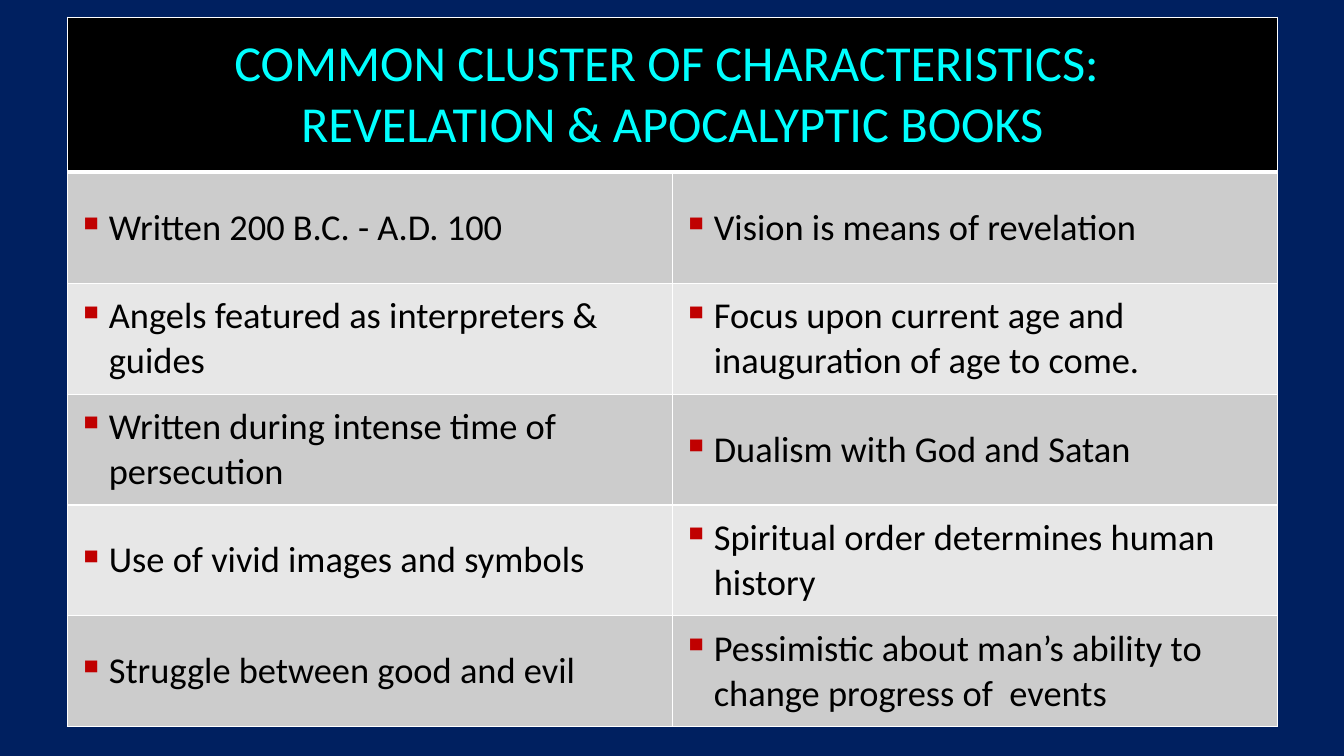
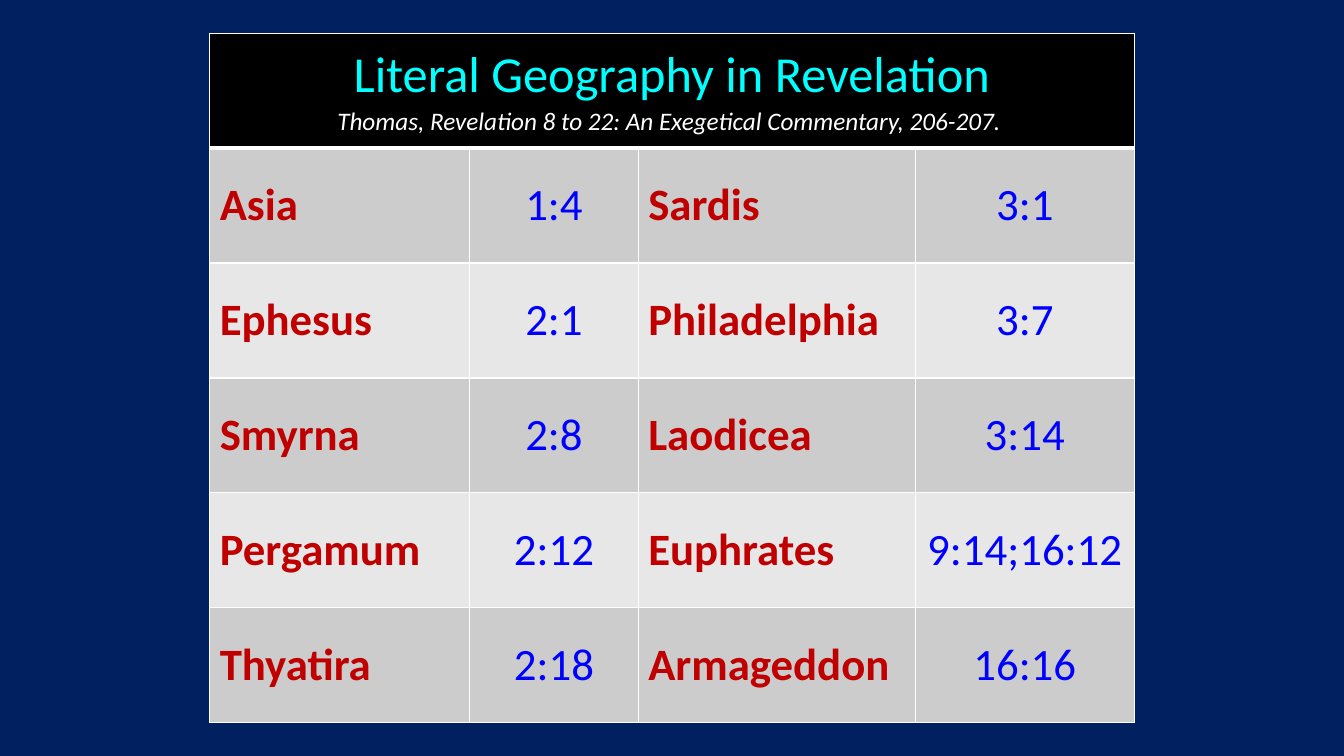
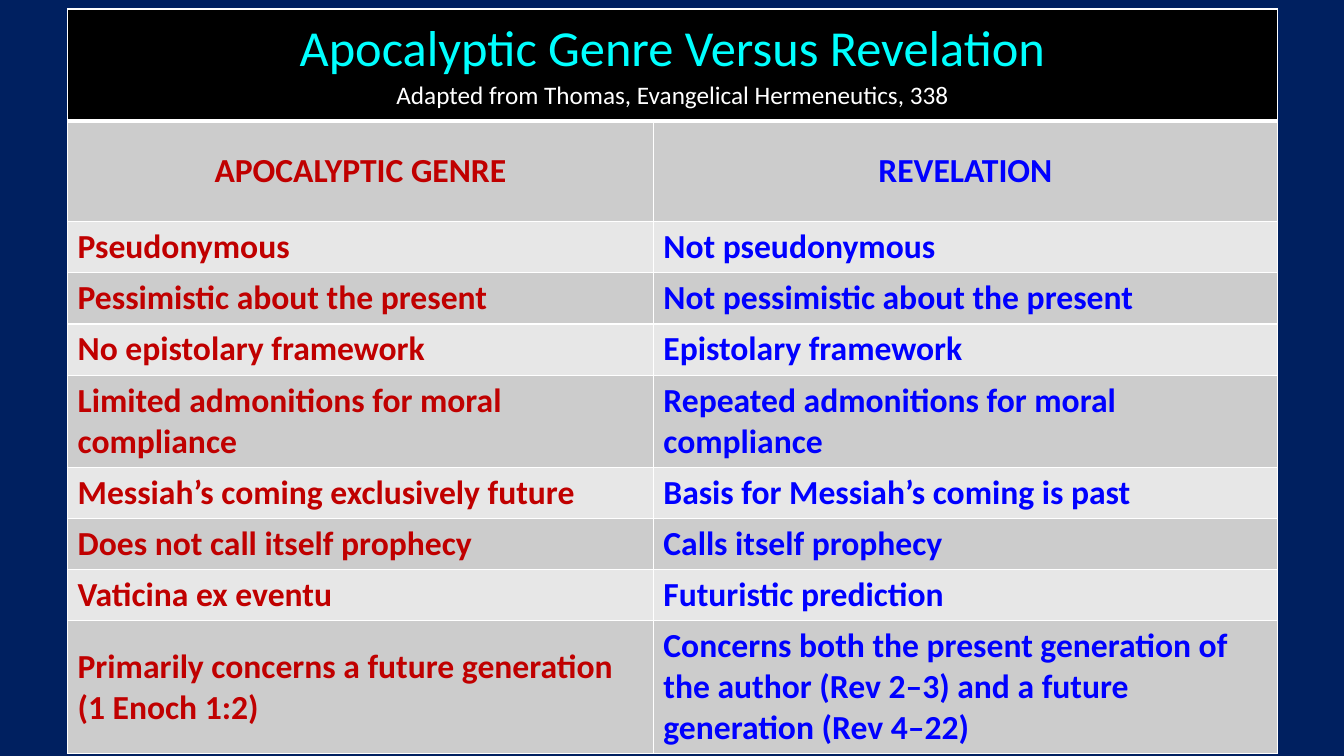
from dataclasses import dataclass
from lxml.etree import SubElement
from pptx import Presentation
from pptx.dml.color import RGBColor
from pptx.enum.text import MSO_ANCHOR as Anchor, PP_ALIGN as Align
from pptx.oxml import parse_xml
from pptx.oxml.ns import nsdecls, qn
from pptx.util import Inches, Pt

HUES = {
    "navy": "002060", "black": "000000", "white": "FFFFFF", "cyan": "00FFFF",
    "red": "C00000", "blue": "0000FF", "dark": "CCCCCC", "light": "E7E7E7",
}
FONT = "Calibri"


@dataclass
class Look:
    """Text style of a line or a column."""
    size: int
    hue: str
    bold: bool = False
    italic: bool = False
    align: Align = Align.LEFT
    bullet: bool = False


TITLE = Look(36, "cyan", align=Align.CENTER)
CREDIT = Look(18, "white", align=Align.CENTER)
CITE = Look(18, "white", italic=True, align=Align.CENTER)
POINT = Look(26, "black", bullet=True)
PLACE = Look(32, "red", bold=True)
VERSE = Look(32, "blue", align=Align.CENTER)
GENRE = Look(24, "red", bold=True)
BOOK = Look(24, "blue", bold=True)

TRAITS = [
    ("Written 200 B.C. - A.D. 100", "Vision is means of revelation"),
    ("Angels featured as interpreters & guides",
     "Focus upon current age and inauguration of age to come."),
    ("Written during intense time of persecution", "Dualism with God and Satan"),
    ("Use of vivid images and symbols", "Spiritual order determines human history"),
    ("Struggle between good and evil",
     "Pessimistic about man’s ability to change progress of  events"),
]
PLACES = [
    ("Asia", "1:4", "Sardis", "3:1"),
    ("Ephesus", "2:1", "Philadelphia", "3:7"),
    ("Smyrna", "2:8", "Laodicea", "3:14"),
    ("Pergamum", "2:12", "Euphrates", "9:14;16:12"),
    ("Thyatira", "2:18", "Armageddon", "16:16"),
]
VERSUS = [
    ("APOCALYPTIC GENRE", "REVELATION"),
    ("Pseudonymous", "Not pseudonymous"),
    ("Pessimistic about the present", "Not pessimistic about the present"),
    ("No epistolary framework", "Epistolary framework"),
    ("Limited admonitions for moral compliance",
     "Repeated admonitions for moral compliance"),
    ("Messiah’s coming exclusively future", "Basis for Messiah’s coming is past"),
    ("Does not call itself prophecy", "Calls itself prophecy"),
    ("Vaticina ex eventu", "Futuristic prediction"),
    ("Primarily concerns a future generation (1 Enoch 1:2)",
     "Concerns both the present generation of the author (Rev 2–3) "
     "and a future generation (Rev 4–22)"),
]


def paint(fill, hue):
    """Give a fill one solid colour."""
    fill.solid()
    fill.fore_color.rgb = RGBColor.from_string(HUES[hue])


def mark(para):
    """Add a hanging red square bullet."""
    props = para._p.get_or_add_pPr()
    props.set("marL", str(Inches(0.31)))
    props.set("indent", str(Inches(-0.31)))
    SubElement(SubElement(props, qn("a:buClr")), qn("a:srgbClr")).set("val", HUES["red"])
    SubElement(props, qn("a:buChar")).set("char", "▪")


def style(para, look):
    """Format a paragraph and its runs."""
    para.alignment = look.align
    if look.bullet:
        mark(para)
    for run in para.runs:
        font = run.font
        font.name, font.size = FONT, Pt(look.size)
        font.bold, font.italic = look.bold, look.italic
        font.color.rgb = RGBColor.from_string(HUES[look.hue])


def edge(cell, top, base):
    """Draw the four white borders of a cell."""
    props = cell._tc.get_or_add_tcPr()
    for spot, (side, width) in enumerate(zip("LRTB", (1, 1, top, base))):
        props.insert(spot, parse_xml(
            f'<a:ln{side} {nsdecls("a")} w="{Pt(width)}"><a:solidFill>'
            f'<a:srgbClr val="{HUES["white"]}"/></a:solidFill></a:ln{side}>'))


def write(cell, lines, looks):
    """Fill a cell with one paragraph for each look."""
    cell.vertical_anchor = Anchor.MIDDLE
    cell.text_frame.text = "\n".join(lines)
    for para, look in zip(cell.text_frame.paragraphs, looks):
        style(para, look)


def grid(deck, box, cols, rows, head, looks, data):
    """Add a slide with a headed, banded table in the box."""
    slide = deck.slides.add_slide(deck.slide_layouts[6])
    frame = slide.shapes.add_table(len(rows), len(cols), *map(Inches, box))
    table = frame.table
    table.first_row = table.horz_banding = False
    for col, width in zip(table.columns, cols):
        col.width = Inches(width)
    for row, height in zip(table.rows, rows):
        row.height = Inches(height)
    frame.height = Inches(box[3])
    for num, row in enumerate(table.rows):
        tint = ("light", "dark")[num % 2] if num else "black"
        for cell in row.cells:
            paint(cell.fill, tint)
            edge(cell, 3 if num == 1 else 1, 1 if num else 3)
    table.cell(0, 0).merge(table.cell(0, len(cols) - 1))
    write(table.cell(0, 0), *zip(*head))
    for num, texts in enumerate(data, 1):
        for col, (text, look) in enumerate(zip(texts, looks)):
            write(table.cell(num, col), [text], [look])
    return table


def traits(deck):
    """Build the slide of shared characteristics."""
    head = [("COMMON CLUSTER OF CHARACTERISTICS: ", TITLE),
            ("REVELATION & APOCALYPTIC BOOKS", TITLE)]
    grid(deck, (0.67, 0.17, 12, 7.04), [6] * 2, [1.54] + [1.1] * 5,
         head, [POINT] * 2, TRAITS)


def places(deck):
    """Build the slide of place names."""
    head = [("Literal Geography in Revelation", TITLE),
            ("Thomas, Revelation 8 to 22: An Exegetical Commentary, 206-207. ", CITE)]
    grid(deck, (2.08, 0.33, 9.17, 6.83), [2.58, 1.67, 2.75, 2.17], [1.14] * 6,
         head, [PLACE, VERSE] * 2, PLACES)


def versus(deck):
    """Build the slide that compares genre and book."""
    head = [("Apocalyptic Genre Versus Revelation", TITLE),
            ("Adapted from Thomas, Evangelical Hermeneutics, 338", CREDIT)]
    table = grid(deck, (0.67, 0.09, 12, 7.31), [5.81, 6.19],
                 [1.11, 1, 0.39, 0.37] + [0.35] * 6, head, [GENRE, BOOK], VERSUS)
    for cell in table.rows[1].cells:
        cell.text_frame.paragraphs[0].alignment = Align.CENTER


def main():
    """Build and save the deck."""
    deck = Presentation()
    deck.slide_width, deck.slide_height = Inches(13.33), Inches(7.5)
    paint(deck.slide_master.background.fill, "navy")
    for build in (traits, places, versus):
        build(deck)
    deck.save("out.pptx")


if __name__ == "__main__":
    main()
